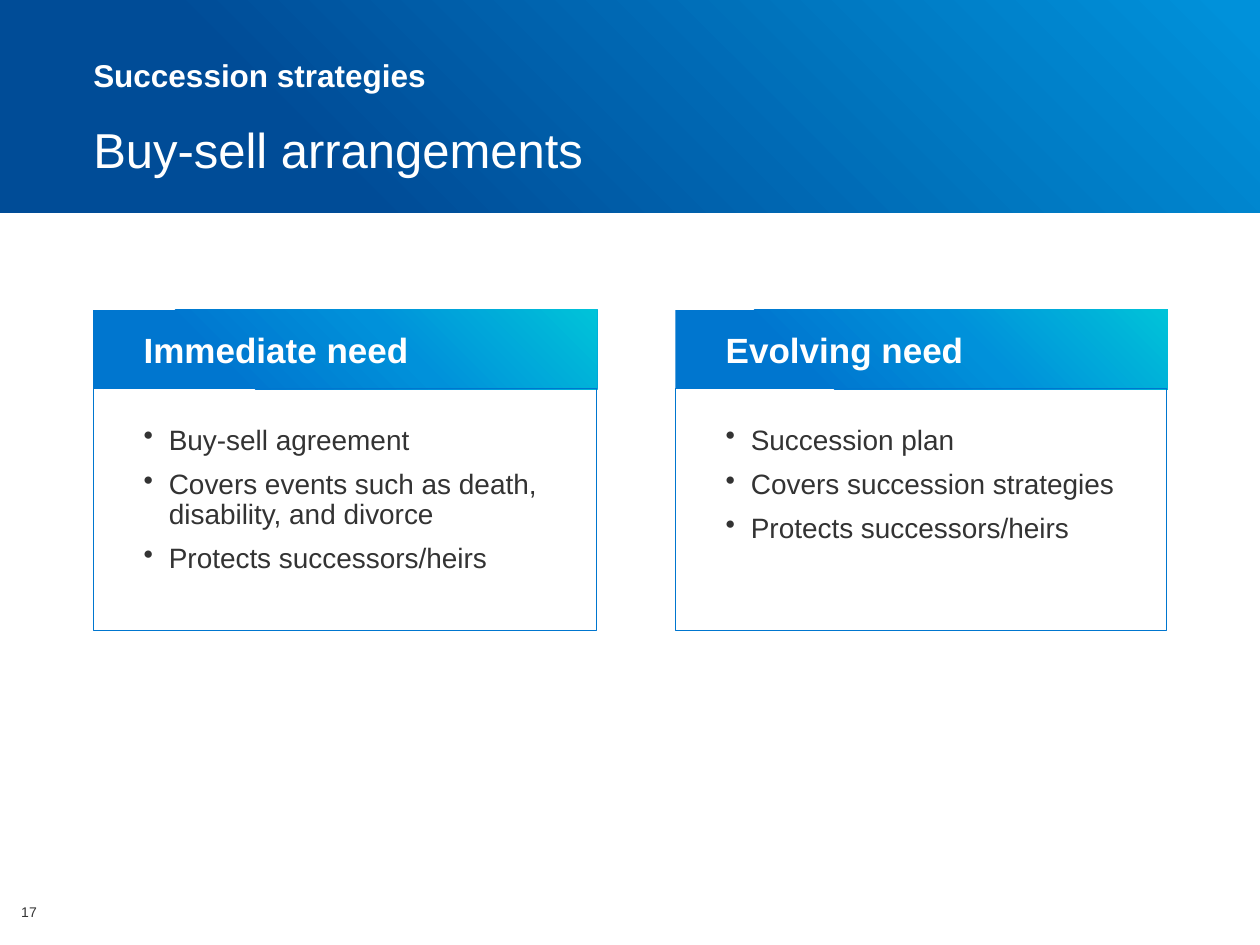
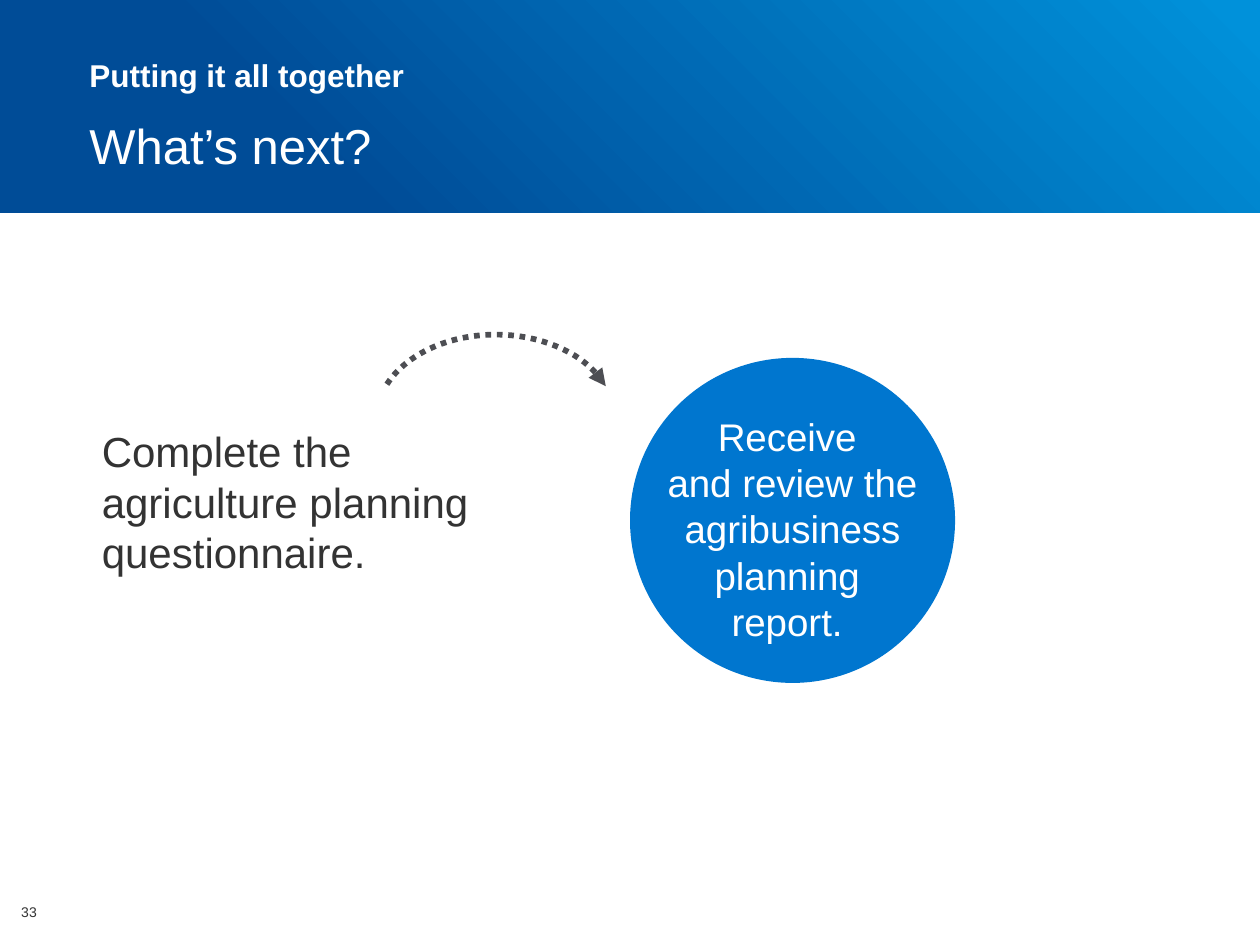
from lxml import etree
from pptx import Presentation
from pptx.dml.color import RGBColor
from pptx.enum import dml, shapes, text
from pptx.oxml import ns
from pptx.util import Inches, Pt

FONT = "Arial"
WHITE = RGBColor(0xFF, 0xFF, 0xFF)
INK = RGBColor(0x33, 0x33, 0x33)
GREY = RGBColor(0x4D, 0x4E, 0x53)
NAVY = RGBColor(0x00, 0x4C, 0x97)
BLUE = RGBColor(0x00, 0x76, 0xCF)
SKY = RGBColor(0x00, 0x91, 0xDA)
AQUA = RGBColor(0x00, 0xC3, 0xD9)

BAND_STOPS = [(25, NAVY), (98, SKY)]
CARD_STOPS = [(25, BLUE), (60, SKY), (100, AQUA)]

STRATEGIES = dict(number="17", topic="Succession strategies",
                  title="Buy-sell arrangements", left=0.74, title_height=0.63)
NEXT_STEPS = dict(number="33", topic="Putting it all together",
                  title="What’s next?", left=0.71, title_height=0.56)
NEEDS = [
    (0.74, 4, "Immediate need",
     ["Buy-sell agreement",
      "Covers events such as death, disability, and divorce",
      "Protects successors/heirs"]),
    (5.36, 3.91, "Evolving need",
     ["Succession plan",
      "Covers succession strategies",
      "Protects successors/heirs"]),
]
QUESTIONNAIRE = "Complete the agriculture planning questionnaire."
REPORT = "Receive \vand review the agribusiness planning \vreport. "

CARD_TOP, HEADER_HEIGHT, CARD_BODY_HEIGHT = 2.46, 0.63, 1.92
ARC_START, ARC_END = 288, 73.1
ADJUSTMENT_PER_DEGREE = 0.6


def box(at):
    return [Inches(length) for length in at]


def add_preset(slide, preset, at):
    shape = slide.shapes.add_shape(preset, *box(at))
    shape.shadow.inherit = False
    shape.fill.background()
    shape.line.fill.background()
    return shape


def fill_gradient(shape, stops):
    shape.fill.gradient()
    shape.fill.gradient_angle = 45
    stop_list = shape._element.spPr.find(".//" + ns.qn("a:gsLst"))
    for stop in list(stop_list):
        stop_list.remove(stop)
    for percent, color in stops:
        stop = etree.SubElement(stop_list, ns.qn("a:gs"), pos=str(percent * 1000))
        etree.SubElement(stop, ns.qn("a:srgbClr"), val=str(color))


def write(shape, paragraphs, size, color, bold=False, insets=None,
          anchor=text.MSO_ANCHOR.TOP, align=text.PP_ALIGN.LEFT,
          line_spacing=None, space_after=None, bullet=False):
    frame = shape.text_frame
    frame.word_wrap = True
    frame.vertical_anchor = anchor
    if insets:
        (frame.margin_left, frame.margin_top,
         frame.margin_right, frame.margin_bottom) = box(insets)
    for index, words in enumerate(paragraphs):
        paragraph = frame.add_paragraph() if index else frame.paragraphs[0]
        paragraph.text = words
        if bullet:
            properties = paragraph._p.get_or_add_pPr()
            properties.set("marL", str(Inches(0.2)))
            properties.set("indent", str(Inches(-0.2)))
            etree.SubElement(properties, ns.qn("a:buChar"), char="•")
        paragraph.alignment = align
        if line_spacing:
            paragraph.line_spacing = line_spacing
        if space_after:
            paragraph.space_after = Pt(space_after)
        font = paragraph.font
        font.name, font.size, font.bold = FONT, Pt(size), bold
        font.color.rgb = color


def add_text(slide, at, words, size, color, **style):
    write(slide.shapes.add_textbox(*box(at)), [words], size, color, **style)


def add_framed_slide(deck, number, topic, title, left, title_height):
    slide = deck.slides.add_slide(deck.slide_layouts[6])
    add_text(slide, (0.07, 7.12, 3.71, 0.24), number, 8, INK)
    band = add_preset(slide, shapes.MSO_SHAPE.RECTANGLE, (0, 0, 10, 1.69))
    fill_gradient(band, BAND_STOPS)
    add_text(slide, (left, 0.87, 8.71, title_height), title, 28, WHITE,
             insets=(0, 0, 0, 0), anchor=text.MSO_ANCHOR.MIDDLE)
    add_text(slide, (left, 0.48, 8.75, 0.47), topic, 18, WHITE, bold=True,
             insets=(0, 0, 0, 0), line_spacing=0.9, space_after=4.5)
    return slide


def add_need(slide, left, width, heading, points):
    header = add_preset(slide, shapes.MSO_SHAPE.RECTANGLE,
                        (left, CARD_TOP, width, HEADER_HEIGHT))
    fill_gradient(header, CARD_STOPS)
    write(header, [heading], 20, WHITE, bold=True,
          insets=(0.4, 0.05, 0.4, 0.05), anchor=text.MSO_ANCHOR.MIDDLE)
    body = add_preset(slide, shapes.MSO_SHAPE.RECTANGLE,
                      (left, CARD_TOP + HEADER_HEIGHT - 0.01,
                       width - 0.01, CARD_BODY_HEIGHT))
    body.line.color.rgb = BLUE
    body.line.width = Pt(0.5)
    write(body, points, 16, INK, insets=(0.4, 0.3, 0.4, 0.05),
          line_spacing=0.9, space_after=8, bullet=True)


def add_curved_arrow(slide):
    arrow = add_preset(slide, shapes.MSO_SHAPE.ARC, (3.26, 2.38, 1.35, 1.9))
    arrow.rotation = 270
    arrow.adjustments[0] = ARC_START * ADJUSTMENT_PER_DEGREE
    arrow.adjustments[1] = ARC_END * ADJUSTMENT_PER_DEGREE
    arrow.line.color.rgb = GREY
    arrow.line.width = Pt(3.25)
    arrow.line.dash_style = dml.MSO_LINE.ROUND_DOT
    etree.SubElement(arrow.line._get_or_add_ln(), ns.qn("a:tailEnd"),
                     type="triangle")


def main():
    deck = Presentation()
    deck.slide_width, deck.slide_height = Inches(10), Inches(7.5)

    strategies = add_framed_slide(deck, **STRATEGIES)
    for need in NEEDS:
        add_need(strategies, *need)

    next_steps = add_framed_slide(deck, **NEXT_STEPS)
    add_text(next_steps, (0.71, 3.33, 3.16, 2), QUESTIONNAIRE, 24, INK)
    add_curved_arrow(next_steps)
    report = add_preset(next_steps, shapes.MSO_SHAPE.OVAL, (5, 2.84, 2.58, 2.58))
    report.fill.solid()
    report.fill.fore_color.rgb = BLUE
    add_text(next_steps, (4.89, 3.23, 2.8, 2), REPORT, 22, WHITE,
             align=text.PP_ALIGN.CENTER)

    deck.save("out.pptx")


if __name__ == "__main__":
    main()
